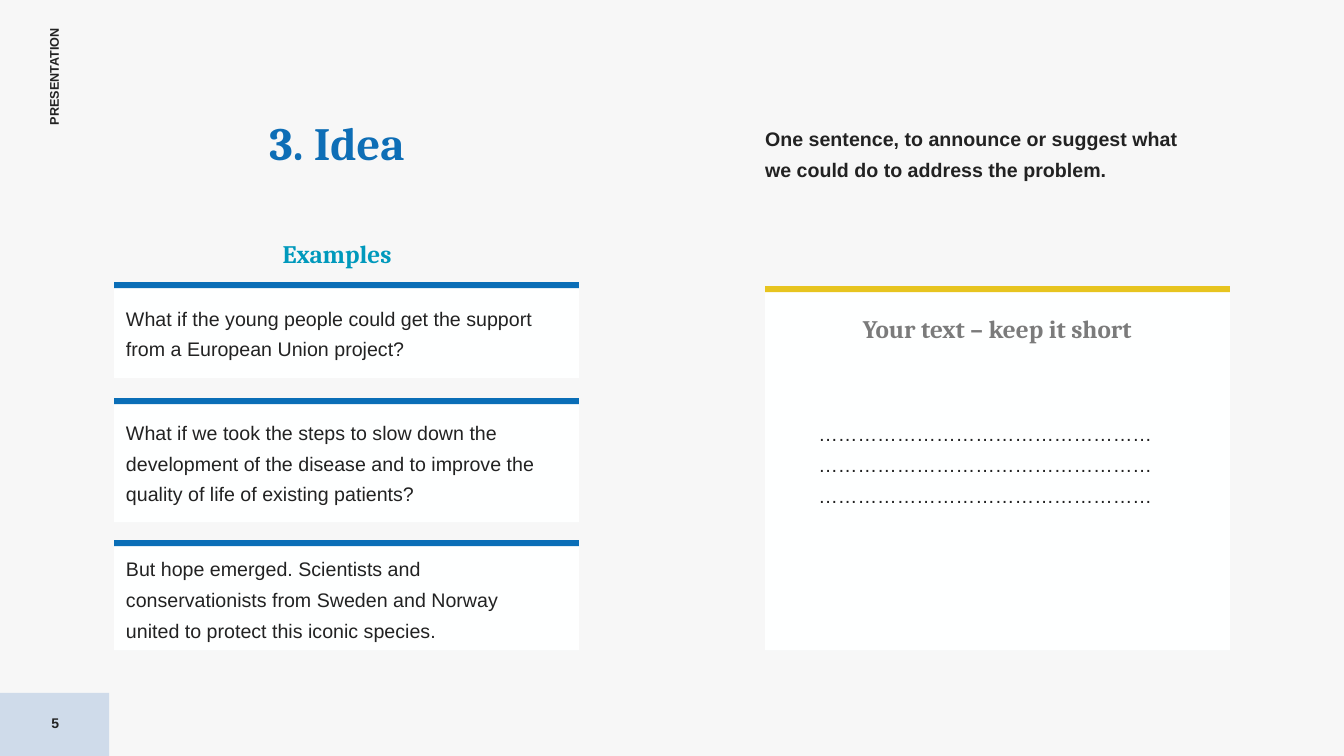
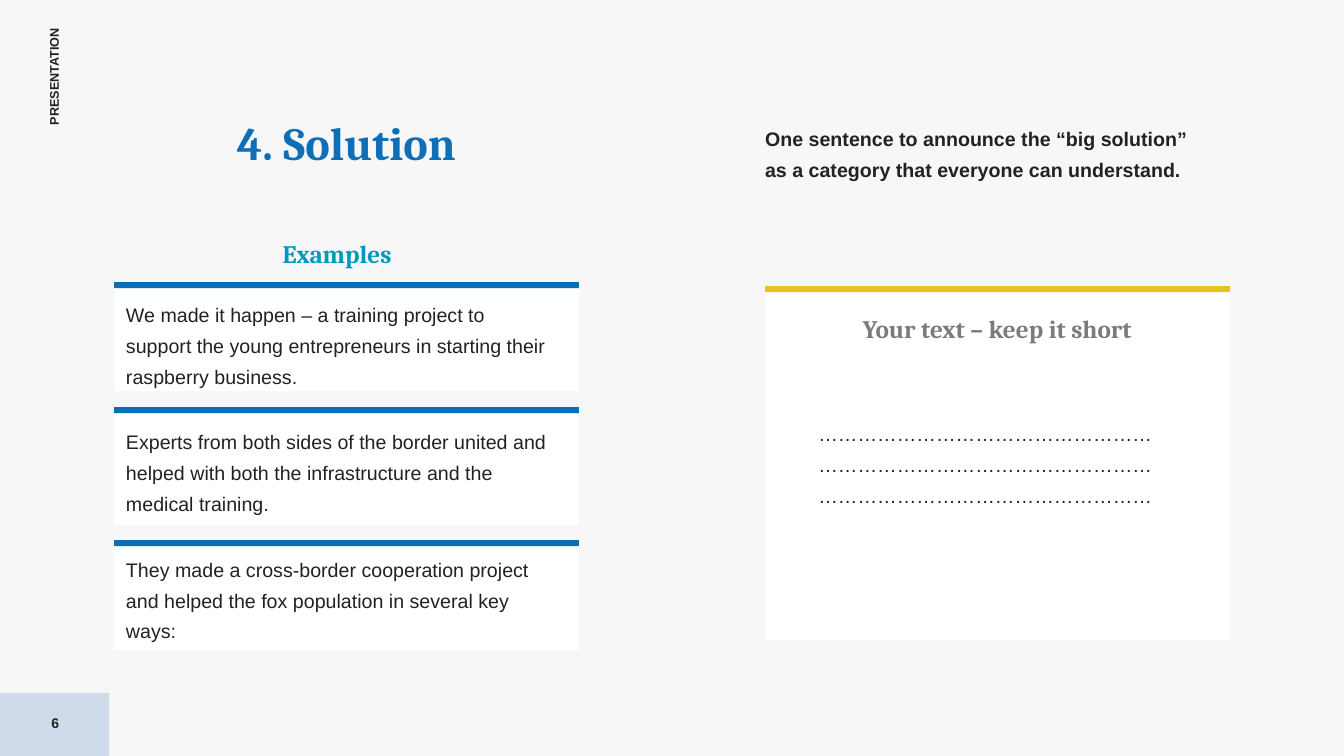
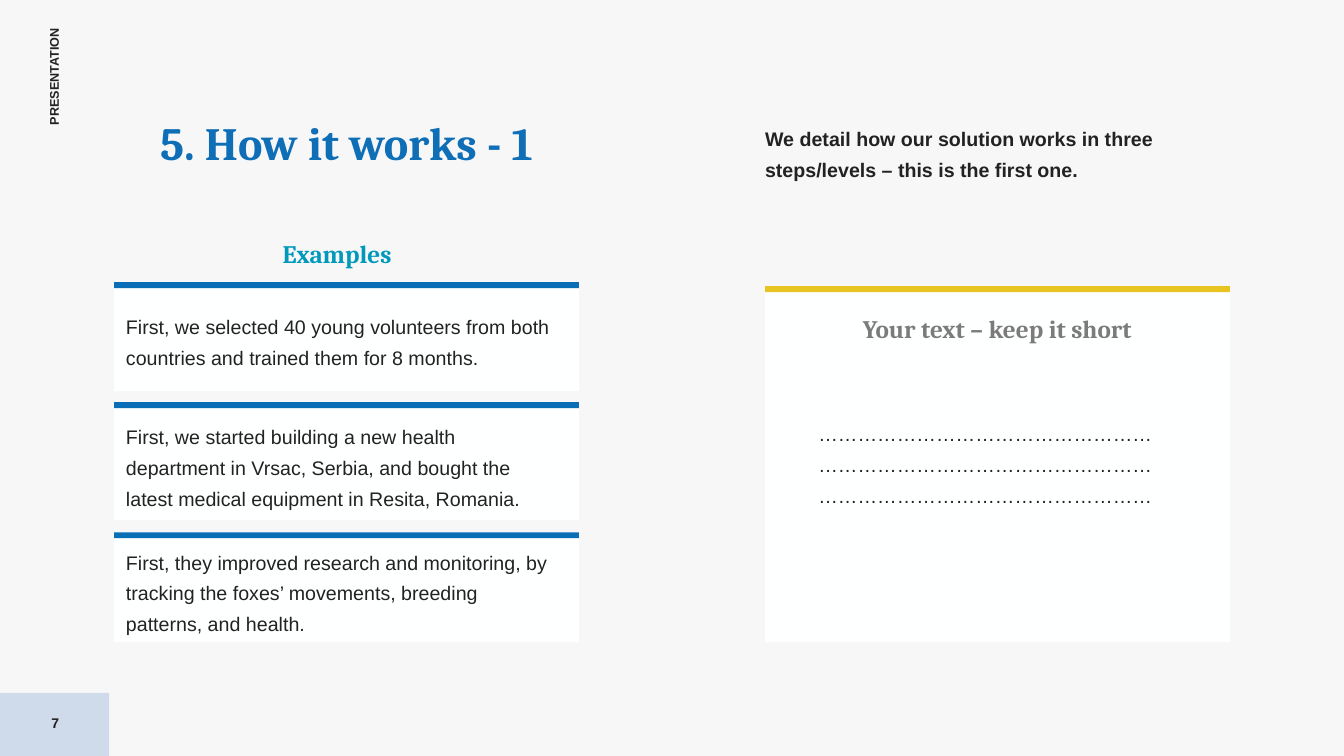
from pptx import Presentation
from pptx import util as u
from pptx.dml import color
from pptx.enum import shapes, text

COLORS = {
    "background": "F7F7F7", "card": "FEFFFF", "footer": "CFDBEA",
    "ink": "222222", "title": "0E6EB6", "bar": "0A6EB7",
    "examples": "0099BC", "panel_bar": "E7C41F", "panel_heading": "7B7B7B",
}

BODY_FONT = {"name": "Arial", "size": u.Pt(14), "bold": False}
LEAD_FONT = {**BODY_FONT, "bold": True}
TITLE_FONT = {"name": "Cambria", "size": u.Pt(33), "bold": True}
HEADING_FONT = {**TITLE_FONT, "size": u.Pt(18)}
HEADER_FONT = {**LEAD_FONT, "size": u.Pt(9)}
PAGE_FONT = {**LEAD_FONT, "size": u.Pt(10)}

BODY_INSETS = (0, 2.9, 17.3, 2.9)
LABEL_INSETS = (7.2, 3.6, 7.2, 3.6)
NO_INSETS = (0, 0, 0, 0)
LEFT, RIGHT, COLUMN_WIDTH = 81.5, 546.5, 332
BAR_HEIGHT = 4.3
PANEL_TOP = 204.5
DOTS = "…" * 51

# Each card: top, height, distance from card top to text box, text
SLIDES = [
    {
        "page": 5, "title": "3. Idea", "title_box": (146, 74, 189.5, 64),
        "lead": "One sentence, to announce or suggest what we could do to address the problem.",
        "panel_height": 260,
        "cards": [
            (201.6, 68.4, 9.4, "What if the young people could get the support from a "
             "European Union project?"),
            (284.4, 88.6, 8.6, "What if we took the steps to slow down the development of "
             "the disease and to improve the quality of life of existing patients?"),
            (385.9, 78.5, 4.3, "But hope emerged. Scientists and conservationists from "
             "Sweden and Norway united to protect this iconic species."),
        ],
    },
    {
        "page": 6, "title": "4. Solution", "title_box": (LEFT, 74.5, COLUMN_WIDTH, 64),
        "lead": "One sentence to announce the “big solution” as a category that everyone "
                "can understand.",
        "panel_height": 252.7,
        "cards": [
            (201.6, 77.8, 7.2, "We made it happen – a training project to support the young "
             "entrepreneurs in starting their raspberry business."),
            (290.9, 84.2, 8.6, "Experts from both sides of the border united and helped "
             "with both the infrastructure and the medical training."),
            (385.9, 78.5, 4.7, "They made a cross-border cooperation project and helped the "
             "fox population in several key ways:"),
        ],
    },
    {
        "page": 7, "title": "5. How it works - 1",
        "title_box": (LEFT, 74.5, COLUMN_WIDTH, 64),
        "lead": "We detail how our solution works in three steps/levels – this is the "
                "first one.",
        "panel_height": 254.2,
        "cards": [
            (201.6, 77.8, 15.8, "First, we selected 40 young volunteers from both countries "
             "and trained them for 8 months."),
            (287.3, 84.2, 8.6, "First, we started building a new health department in Vrsac, "
             "Serbia, and bought the latest medical equipment in Resita, Romania."),
            (380.2, 78.5, 5.3, "First, they improved research and monitoring, by tracking "
             "the foxes’ movements, breeding patterns, and health."),
        ],
    },
]


def set_attributes(target, values):
    for name, value in values.items():
        setattr(target, name, value)


def rgb(name):
    return color.RGBColor.from_string(COLORS[name])


def write(shape, wording, font, color_name="ink", align="LEFT", anchor="TOP",
          insets=BODY_INSETS, spacing=1.3, grow=True):
    """Put one formatted paragraph into a text box or placeholder."""
    frame = shape.text_frame
    frame.text = wording
    sides = ("margin_left", "margin_top", "margin_right", "margin_bottom")
    set_attributes(frame, dict(zip(sides, map(u.Pt, insets))))
    fit = text.MSO_AUTO_SIZE
    set_attributes(frame, {
        "word_wrap": True,
        "vertical_anchor": getattr(text.MSO_ANCHOR, anchor),
        "auto_size": fit.SHAPE_TO_FIT_TEXT if grow else fit.NONE,
    })
    paragraph = frame.paragraphs[0]
    set_attributes(paragraph, {
        "alignment": getattr(text.PP_ALIGN, align), "line_spacing": spacing,
    })
    set_attributes(paragraph.font, font)
    paragraph.font.color.rgb = rgb(color_name)


def add_text(slide, box, wording, font, **options):
    shape = slide.shapes.add_textbox(*map(u.Pt, box))
    write(shape, wording, font, **options)
    return shape


def add_heading(slide, box, wording, color_name):
    add_text(slide, box, wording, HEADING_FONT, color_name=color_name,
             align="CENTER", anchor="MIDDLE", insets=NO_INSETS)


def add_rectangle(slide, box, color_name):
    shape = slide.shapes.add_shape(shapes.MSO_SHAPE.RECTANGLE, *map(u.Pt, box))
    shape.shadow.inherit = False
    shape.fill.solid()
    shape.fill.fore_color.rgb = rgb(color_name)
    shape.line.fill.background()
    return shape


def add_card(slide, left, top, height, bar_color):
    """White card with a coloured bar along its top edge."""
    add_rectangle(slide, (left, top, COLUMN_WIDTH, height), "card")
    add_rectangle(slide, (left, top, COLUMN_WIDTH, BAR_HEIGHT), bar_color)


def furnish_layout(layout, slide):
    """Draw the shared parts on a slide, then move them to its layout."""
    for placeholder in list(layout.placeholders):
        if placeholder.placeholder_format.idx != 0:
            layout.shapes.element.remove(placeholder.element)
    footer = add_rectangle(slide, (0, 495, 78, 45), "footer")
    header = add_text(slide, (-4.3, 44.6, 85.7, 18), "PRESENTATION", HEADER_FONT,
                      insets=LABEL_INSETS, spacing=1.0)
    header.rotation = 270
    for shape in (footer, header):
        layout.shapes.element.append(shape.element)


def fill_slide(slide, content):
    title = slide.shapes.title
    set_attributes(title, dict(zip(("left", "top", "width", "height"),
                                   map(u.Pt, content["title_box"]))))
    write(title, content["title"], TITLE_FONT, color_name="title", align="CENTER",
          insets=(0, 15, 0, 0), spacing=0.8, grow=False)
    add_text(slide, (0, 502, 79, 29), str(content["page"]), PAGE_FONT, align="CENTER",
             anchor="MIDDLE", insets=LABEL_INSETS, spacing=1.0, grow=False)
    add_text(slide, (RIGHT, 82.8, COLUMN_WIDTH, 47.5), content["lead"], LEAD_FONT)

    add_card(slide, RIGHT, PANEL_TOP, content["panel_height"], "panel_bar")
    add_heading(slide, (588.2, 219, 248.4, 25.2), "Your text – keep it short",
                "panel_heading")
    add_text(slide, (581.8, 293.8, 261.4, 69.8), DOTS, BODY_FONT, align="CENTER")

    add_heading(slide, (116.6, 165, 248.4, 25.2), "Examples", "examples")
    for top, height, offset, wording in content["cards"]:
        add_card(slide, LEFT, top, height, "bar")
        add_text(slide, (90, top + offset, 322.6, 69.8), wording, BODY_FONT)


def main():
    presentation = Presentation()
    set_attributes(presentation, {"slide_width": u.Pt(960), "slide_height": u.Pt(540)})
    background = presentation.slide_master.background.fill
    background.solid()
    background.fore_color.rgb = rgb("background")
    layout = presentation.slide_layouts.get_by_name("Title Only")
    for index, content in enumerate(SLIDES):
        slide = presentation.slides.add_slide(layout)
        if index == 0:
            furnish_layout(layout, slide)
        fill_slide(slide, content)
    presentation.save("out.pptx")


if __name__ == "__main__":
    main()
